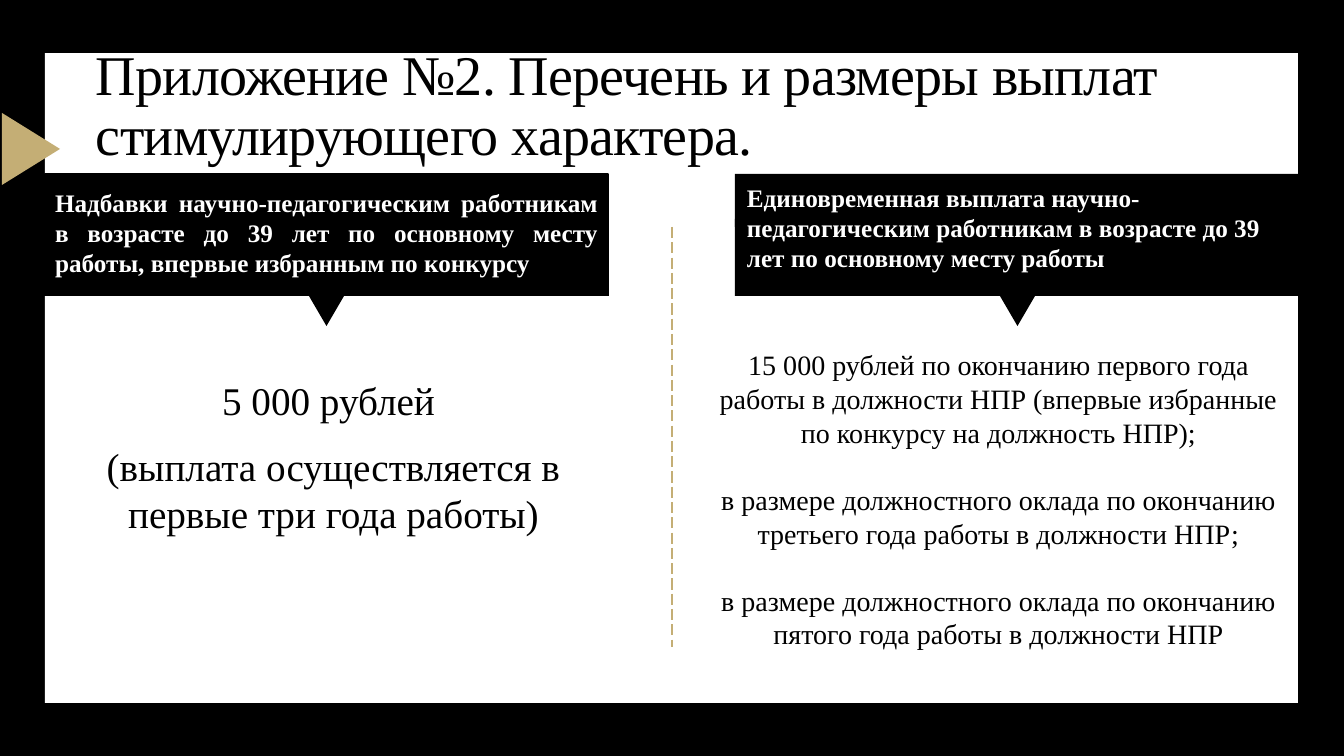
from dataclasses import dataclass

from lxml import etree
from pptx import Presentation, util as u
from pptx.dml.color import RGBColor
from pptx.enum import dml, shapes, text
from pptx.oxml.ns import qn

EMU_PER_PX = 914400 / 100.8


@dataclass(frozen=True)
class Theme:
    font: str = "Times New Roman"
    black: RGBColor = RGBColor(0, 0, 0)
    white: RGBColor = RGBColor(255, 255, 255)
    gold: RGBColor = RGBColor(0xC4, 0xAE, 0x75)
    title_size: int = 40
    amount_size: int = 28
    terms_size: int = 20
    header_size: int = 18


def px(length):
    return u.Emu(round(length * EMU_PER_PX))


class SlideBuilder:
    def __init__(self, slide, theme):
        self.slide = slide
        self.theme = theme
        slide.background.fill.solid()
        slide.background.fill.fore_color.rgb = theme.black

    def block(self, kind, box, color, rotation=0, outline=None):
        shape = self.slide.shapes.add_shape(kind, *map(px, box))
        shape.shadow.inherit = False
        shape.rotation = rotation
        shape.fill.solid()
        shape.fill.fore_color.rgb = color
        if outline:
            shape.line.color.rgb = color
            shape.line.width = u.Pt(outline)
        else:
            shape.line.fill.background()

    def rectangle(self, box, color, outline=None):
        self.block(shapes.MSO_SHAPE.RECTANGLE, box, color, outline=outline)

    def triangle(self, box, color, rotation):
        self.block(shapes.MSO_SHAPE.ISOSCELES_TRIANGLE, box, color, rotation)

    def divider(self, x, top, bottom):
        line = self.slide.shapes.add_connector(
            shapes.MSO_CONNECTOR.STRAIGHT, px(x), px(top), px(x), px(bottom))
        line.line.color.rgb = self.theme.gold
        line.line.width = u.Pt(1)
        line.line.dash_style = dml.MSO_LINE.LONG_DASH
        etree.SubElement(line._element.spPr, qn("a:effectLst"))

    def words(self, box, paragraphs, size, color=None, align=text.PP_ALIGN.LEFT,
              bold=False, before=0, after=0, insets=(10, 10),
              anchor=text.MSO_ANCHOR.TOP, line_spacing=None, tracking=None):
        """Add a text box; before and after are points, tracking is 1/100 pt."""
        frame = self.slide.shapes.add_textbox(*map(px, box)).text_frame
        frame.word_wrap = True
        frame.vertical_anchor = anchor
        frame.margin_left, frame.margin_right = map(px, insets)
        frame.text = "\n".join(paragraphs)
        for index, paragraph in enumerate(frame.paragraphs):
            paragraph.alignment = align
            paragraph.space_before = u.Pt(before if index else 0)
            paragraph.space_after = u.Pt(after)
            paragraph.line_spacing = line_spacing
            font = paragraph.font
            font.name, font.size, font.bold = self.theme.font, u.Pt(size), bold
            font.color.rgb = color or self.theme.black
            if tracking:
                for run in paragraph.runs:
                    run.font._element.set("spc", str(tracking))


def main():
    theme = Theme()
    deck = Presentation()
    deck.slide_width, deck.slide_height = px(1344), px(756)
    page = SlideBuilder(deck.slides.add_slide(deck.slide_layouts[6]), theme)

    page.rectangle((45, 53, 1253, 650), theme.white)
    page.triangle((-5, 120, 72, 58), theme.gold, rotation=90)
    page.divider(672, 227, 647)
    page.words(
        (86, 54, 1125, 107),
        ["Приложение №2. Перечень и размеры выплат стимулирующего характера."],
        theme.title_size, anchor=text.MSO_ANCHOR.MIDDLE,
        line_spacing=0.9, tracking=-50)

    columns = [
        (44, 45, 1.25, (45, 182, 563, 102), text.PP_ALIGN.JUSTIFY,
         "Надбавки научно-педагогическим работникам в возрасте до 39 лет "
         "по основному месту работы, впервые избранным по конкурсу"),
        (735, 735, None, (737, 177, 561, 102), text.PP_ALIGN.LEFT,
         "Единовременная выплата научно-педагогическим работникам в возрасте "
         "до 39 лет по основному месту работы"),
    ]
    for left, cap_left, outline, header_box, align, header in columns:
        page.rectangle((left, 219, 565, 77), theme.black)
        page.triangle((left + 265, 296, 35, 30), theme.black, rotation=180)
        page.rectangle((cap_left, 174, 563, 53), theme.black, outline)
        page.words(header_box, [header], theme.header_size, theme.white, align, bold=True)

    page.words(
        (73, 371, 511, 296),
        ["5 000 рублей ", "(выплата осуществляется в первые три года работы)"],
        theme.amount_size, align=text.PP_ALIGN.CENTER,
        before=12, after=2, insets=(10, 0))
    page.words(
        (697, 343, 603, 316),
        ["15 000 рублей по окончанию первого года работы в должности НПР "
         "(впервые избранные по конкурсу на должность НПР);",
         "в размере должностного оклада по окончанию третьего года работы "
         "в должности НПР;",
         "в размере должностного оклада по окончанию пятого года работы "
         "в должности НПР"],
        theme.terms_size, align=text.PP_ALIGN.CENTER, before=24)

    deck.save("out.pptx")


if __name__ == "__main__":
    main()
